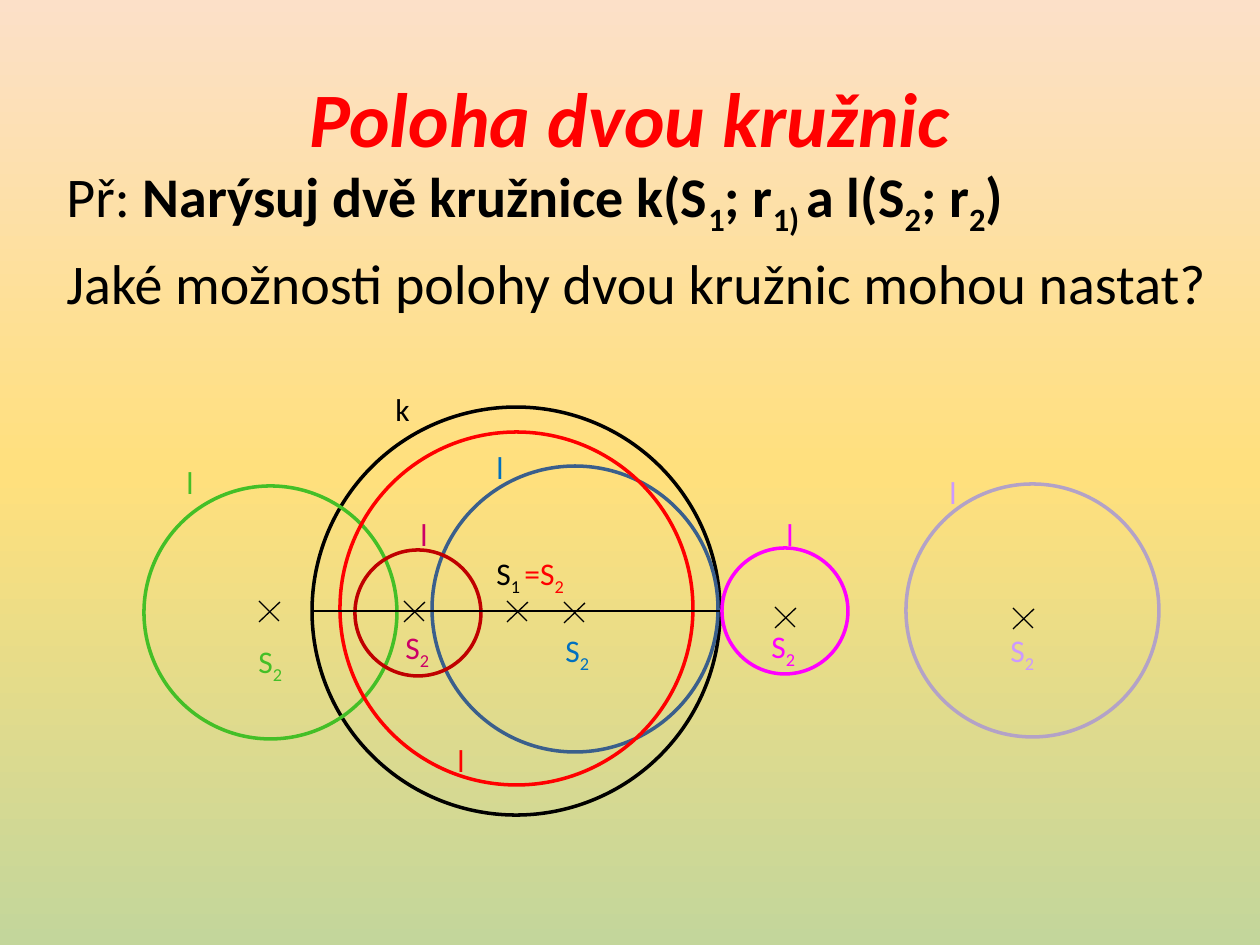
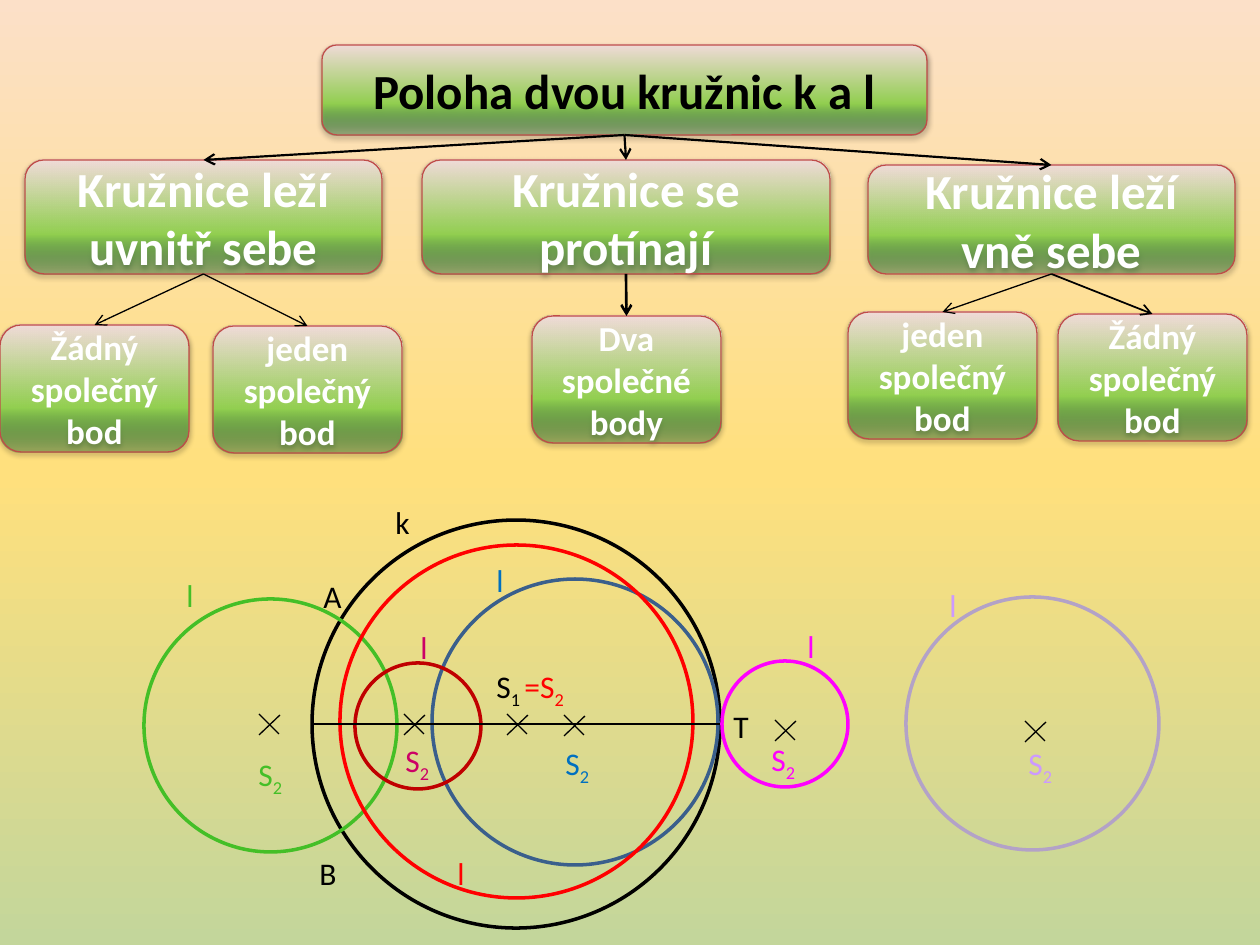
import dataclasses
from typing import Any, Optional

import lxml.etree
import pptx
import pptx.dml.color
import pptx.enum.shapes
import pptx.enum.text
import pptx.oxml.ns
import pptx.util

RGB = pptx.dml.color.RGBColor
KIND = pptx.enum.shapes.MSO_SHAPE
ALIGN = pptx.enum.text.PP_ALIGN
ANCHOR = pptx.enum.text.MSO_ANCHOR
FIT = pptx.enum.text.MSO_AUTO_SIZE
qn = pptx.oxml.ns.qn

BLACK = RGB(0x00, 0x00, 0x00)
WHITE = RGB(0xFF, 0xFF, 0xFF)
RED = RGB(0xFF, 0x00, 0x00)
GREEN = RGB(0x44, 0xBF, 0x27)
NAVY = RGB(0x3A, 0x5F, 0x8C)
BLUE = RGB(0x00, 0x70, 0xC0)
PINK = RGB(0xFF, 0x00, 0xFF)
MAUVE = RGB(0xB3, 0xA2, 0xC7)
LILAC = RGB(0xCC, 0x99, 0xFF)
WINE = RGB(0xC0, 0x00, 0x00)
ROSE = RGB(0xCC, 0x00, 0x66)
EDGE = RGB(0xBF, 0x4C, 0x48)
PEACH = RGB(0xFC, 0xE0, 0xC8)
GOLD = RGB(0xFF, 0xE0, 0x7D)
SAGE = RGB(0xC3, 0xD6, 0x9B)
FOREST = RGB(0x00, 0x64, 0x2D)
LIME = RGB(0x92, 0xD0, 0x50)
BLUSH = RGB(0xF2, 0xDC, 0xDB)

FONT = "Calibri"
WIDE, TALL = 1260, 945
SHIFT = 113  # the drawing sits this much lower on the second slide
CROSS = 20
LABEL = 50
WIDTHS = {"l": 33, "k": 40, "S|1": 50, "S|2": 50, "=S|2": 67, "T": 43, "A": 44, "B": 44}

Point = tuple[int, int]


@dataclasses.dataclass(frozen=True)
class Stop:
    pos: int
    color: RGB
    alpha: int = 100


@dataclasses.dataclass(frozen=True)
class Ring:
    line: RGB
    ink: RGB
    left: int
    top: int
    size: int
    name: str
    place: Point
    center: str
    spot: Point
    mark: Optional[Point] = None


@dataclasses.dataclass(frozen=True)
class Box:
    text: str
    left: int
    top: int
    width: int
    height: int
    size: int = 28
    ink: RGB = WHITE
    root: Optional[int] = None
    weight: float = 1.25


SKY = [Stop(0, PEACH), Stop(50, GOLD), Stop(100, SAGE)]
GLOSS = [Stop(0, FOREST, 29), Stop(35, LIME), Stop(100, BLUSH)]

GIVEN = Ring(BLACK, BLACK, 312, 407, 408, "k", (383, 384), "S|1", (484, 548), (507, 601))
INNER = Ring(NAVY, BLUE, 432, 466, 286, "l", (484, 442), "S|2", (553, 625), (564, 602))
TOUCH = Ring(PINK, PINK, 722, 548, 126, "l", (774, 509), "S|2", (759, 621), (775, 607))
APART = Ring(MAUVE, LILAC, 906, 484, 253, "l", (937, 467), "S|2", (998, 625), (1013, 608))
CUT = Ring(GREEN, GREEN, 144, 486, 253, "l", (174, 457), "S|2", (246, 636), (259, 601))
SAME = Ring(RED, RED, 340, 432, 353, "l", (445, 735), "=S|2", (512, 548))
SMALL = Ring(WINE, ROSE, 355, 550, 126, "l", (408, 509), "S|2", (393, 622), (404, 601))

RINGS = [GIVEN, INNER, TOUCH, APART, CUT, SAME, SMALL]
MOVED = {
    TOUCH: dataclasses.replace(TOUCH, place=(795, 508)),
    APART: dataclasses.replace(APART, spot=(1016, 625), mark=(1025, 608)),
}
POINTS = [("T", (721, 701)), ("A", (311, 571)), ("B", (307, 848))]


def leaf(text: str, left: int, top: int, root: int, weight: float = 0.75) -> Box:
    return Box(text, left, top, 189, 127, 20, WHITE, root, weight)


TREE = [
    Box("Poloha dvou kružnic k a l", 322, 45, 605, 90, ink=BLACK),
    Box("Kružnice leží uvnitř sebe", 25, 160, 357, 114, root=0),
    Box("Kružnice se protínají", 422, 160, 408, 114, root=0),
    Box("Kružnice leží vně sebe", 868, 165, 367, 109, root=0),
    leaf("Žádný společný bod", 0, 325, 1),
    leaf("jeden společný bod", 213, 326, 1),
    leaf("Žádný společný bod", 1058, 314, 3, 1),
    leaf("jeden společný bod", 848, 312, 3),
    leaf("Dva společné body", 532, 316, 2, 1.5),
]


def px(count: int) -> pptx.util.Emu:
    return pptx.util.Emu(round(count * 914400 / 126))


def node(root: Any, tag: str, **attrs: Any) -> Any:
    return lxml.etree.SubElement(root, qn(tag), {key: str(val) for key, val in attrs.items()})


def shade(fill: Any, root: Any, stops: list[Stop], angle: int) -> None:
    """Fill with a gradient of any number of stops; root is the XML around the fill."""
    fill.gradient()
    fill.gradient_angle = angle
    held = root.find(".//" + qn("a:gsLst"))
    for old in list(held):
        held.remove(old)
    for stop in stops:
        color = node(node(held, "a:gs", pos=stop.pos * 1000), "a:srgbClr", val=stop.color)
        if stop.alpha < 100:
            node(color, "a:alpha", val=stop.alpha * 1000)


def style(par: Any, size: int, ink: RGB, bold: bool = False) -> None:
    par.font.name = FONT
    par.font.size = pptx.util.Pt(size)
    par.font.color.rgb = ink
    par.font.bold = bold


def write(par: Any, text: str) -> None:
    """Add runs; every second part between bars is a subscript."""
    for turn, part in enumerate(text.split("|")):
        run = par.add_run()
        run.text = part
        if turn % 2:
            run.font._element.set("baseline", "-25000")


def frame(slide: Any, left: int, top: int, width: int, height: int) -> Any:
    box = slide.shapes.add_textbox(px(left), px(top), px(width), px(height))
    box.text_frame.word_wrap = True
    return box.text_frame


def label(slide: Any, text: str, spot: Point, ink: RGB, drop: int = 0) -> None:
    text_box = frame(slide, spot[0], spot[1] + drop, WIDTHS[text], LABEL)
    text_box.word_wrap = False
    text_box.auto_size = FIT.SHAPE_TO_FIT_TEXT
    par = text_box.paragraphs[0]
    style(par, 18, ink)
    write(par, text)


def line(slide: Any, start: Point, end: Point, weight: float = 0.75) -> Any:
    link = slide.shapes.add_connector(
        pptx.enum.shapes.MSO_CONNECTOR.STRAIGHT, *map(px, start + end))
    link.line.color.rgb = BLACK
    link.line.width = pptx.util.Pt(weight)
    node(link._element.spPr, "a:effectLst")
    return link


def cross(slide: Any, left: int, top: int) -> None:
    line(slide, (left, top), (left + CROSS, top + CROSS))
    line(slide, (left + CROSS + 1, top + 1), (left, top + CROSS + 1))


def circle(slide: Any, ring: Ring, drop: int) -> None:
    oval = slide.shapes.add_shape(
        KIND.OVAL, px(ring.left), px(ring.top + drop), px(ring.size), px(ring.size))
    oval.shadow.inherit = False
    oval.fill.background()
    oval.line.color.rgb = ring.line
    oval.line.width = pptx.util.Pt(2)
    if ring.mark:
        cross(slide, ring.mark[0], ring.mark[1] + drop)
    label(slide, ring.name, ring.place, ring.ink, drop)
    label(slide, ring.center, ring.spot, ring.ink, drop)


def draw(slide: Any, rings: list[Ring], drop: int = 0) -> None:
    """Draw all circles and the diameter of the given one."""
    for ring in rings:
        circle(slide, ring, drop)
    mid = GIVEN.top + GIVEN.size // 2 + drop
    line(slide, (GIVEN.left, mid), (GIVEN.left + GIVEN.size, mid))


def panel(slide: Any, box: Box) -> Any:
    shape = slide.shapes.add_shape(
        KIND.ROUNDED_RECTANGLE, px(box.left), px(box.top), px(box.width), px(box.height))
    props = shape._element.spPr
    shade(shape.fill, props, GLOSS, 90)
    shape.line.color.rgb = EDGE
    shape.line.width = pptx.util.Pt(0.75)
    shape.shadow.inherit = False
    cast = node(props.find(qn("a:effectLst")), "a:outerShdw",
                blurRad=40000, dist=20000, dir=5400000, rotWithShape=0)
    node(node(cast, "a:srgbClr", val=BLACK), "a:alpha", val=38000)
    shape.text_frame.vertical_anchor = ANCHOR.MIDDLE
    par = shape.text_frame.paragraphs[0]
    par.alignment = ALIGN.CENTER
    style(par, box.size, box.ink, True)
    write(par, box.text)
    return shape


def arrow(slide: Any, start: Any, end: Any, weight: float) -> None:
    """Join the bottom of one panel to the top of another."""
    link = line(slide, (0, 0), (0, 0), weight)
    link.begin_connect(start, 2)
    link.end_connect(end, 0)
    node(link._element.spPr.find(qn("a:ln")), "a:tailEnd", type="arrow")


def page(deck: Any) -> Any:
    slide = deck.slides.add_slide(deck.slide_layouts[6])
    shade(slide.background.fill, slide._element, SKY, 270)
    return slide


def task(deck: Any) -> None:
    slide = page(deck)
    title = frame(slide, 63, 38, 1134, 157)
    title.vertical_anchor = ANCHOR.MIDDLE
    head = title.paragraphs[0]
    head.alignment = ALIGN.CENTER
    style(head, 44, RED, True)
    head.font.italic = True
    write(head, "Poloha dvou kružnic")

    body = frame(slide, 54, 155, 1206, 163)
    first, second = body.paragraphs[0], body.add_paragraph()
    for par, bold in ((first, True), (second, False)):
        style(par, 32, BLACK, bold)
        par.space_before = pptx.util.Pt(6.4)
    lead = first.add_run()
    lead.text = "Př: "
    lead.font.bold = False
    write(first, "Narýsuj dvě kružnice k(S|1|; r|1) |a l(S|2|; r|2|)")
    write(second, "Jaké možnosti polohy dvou kružnic mohou nastat?")
    draw(slide, RINGS)


def chart(deck: Any) -> None:
    slide = page(deck)
    panels = [panel(slide, box) for box in TREE]
    for box, shape in zip(TREE, panels):
        if box.root is not None:
            arrow(slide, panels[box.root], shape, box.weight)
    draw(slide, [MOVED.get(ring, ring) for ring in RINGS], SHIFT)
    for name, spot in POINTS:
        label(slide, name, spot, BLACK)


def main() -> None:
    deck = pptx.Presentation()
    deck.slide_width, deck.slide_height = px(WIDE), px(TALL)
    task(deck)
    chart(deck)
    deck.save("out.pptx")


if __name__ == "__main__":
    main()
